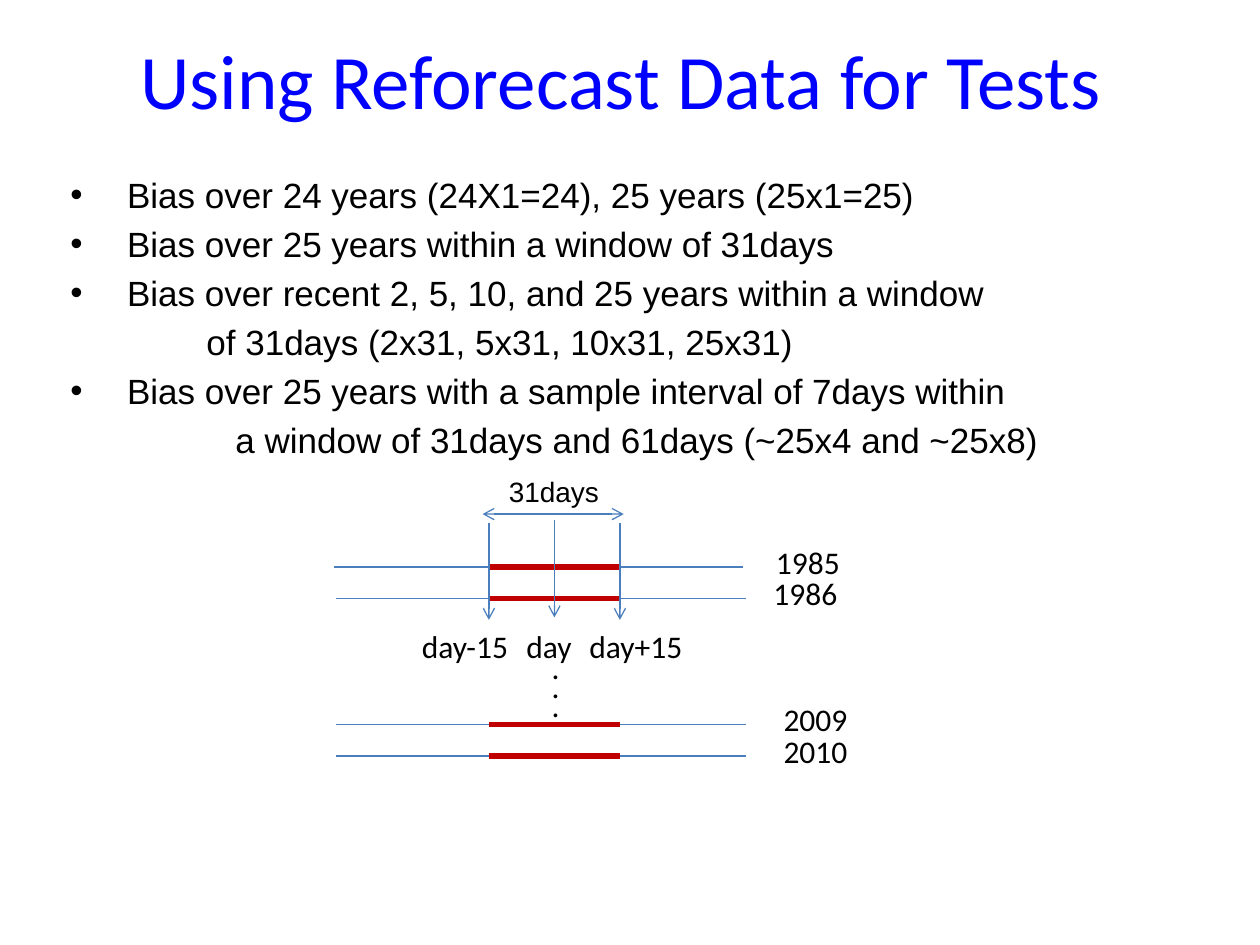
import pptx
import pptx.util
import pptx.dml.color
import pptx.enum.shapes
import pptx.enum.text
import pptx.oxml.ns
import lxml.etree

Inches = pptx.util.Inches
Pt = pptx.util.Pt
qn = pptx.oxml.ns.qn

COLORS = {"title": "0000FF", "text": "000000", "axis": "4B7EBC", "window": "C00000"}


def format_paragraph(paragraph, size, font, color):
    for run in paragraph.runs:
        run.font.size = Pt(size)
        run.font.name = font
        run.font.color.rgb = pptx.dml.color.RGBColor.from_string(COLORS[color])


def add_label(slide, left, top, width, height, text, wrap=False, line_spacing=None):
    label = slide.shapes.add_textbox(Inches(left), Inches(top), Inches(width), Inches(height))
    frame = label.text_frame
    frame.word_wrap = wrap
    frame.auto_size = pptx.enum.text.MSO_AUTO_SIZE.SHAPE_TO_FIT_TEXT
    frame.text = text
    for paragraph in frame.paragraphs:
        paragraph.line_spacing = line_spacing
        format_paragraph(paragraph, 18, "Calibri", "text")


def add_line(slide, start, end, color="axis", weight=0.75, arrows=()):
    line = slide.shapes.add_connector(
        pptx.enum.shapes.MSO_CONNECTOR.STRAIGHT,
        Inches(start[0]), Inches(start[1]), Inches(end[0]), Inches(end[1]))
    line.line.color.rgb = pptx.dml.color.RGBColor.from_string(COLORS[color])
    line.line.width = Pt(weight)
    outline = line.line._get_or_add_ln()
    for arrow in arrows:
        lxml.etree.SubElement(outline, qn(f"a:{arrow}"), type="arrow")
    lxml.etree.SubElement(line._element.spPr, qn("a:effectLst"))


def add_title(slide, left, top, width, height):
    title = slide.shapes.add_textbox(Inches(left), Inches(top), Inches(width), Inches(height))
    frame = title.text_frame
    frame.word_wrap = True
    frame.vertical_anchor = pptx.enum.text.MSO_ANCHOR.MIDDLE
    frame.text = "Using Reforecast Data for Tests"
    frame.paragraphs[0].alignment = pptx.enum.text.PP_ALIGN.CENTER
    format_paragraph(frame.paragraphs[0], 44, "Calibri", "title")


def add_bias_list(slide, left, top, width, height):
    bullet_indent = 0.45
    entries = [
        ("Bias over 24 years (24X1=24), 25 years (25x1=25)", bullet_indent, 20, 4),
        ("Bias over 25 years within a window of 31days", bullet_indent, 20, 4),
        ("Bias over recent 2, 5, 10, and 25 years within a window", bullet_indent, 20, 4),
        ("of 31days (2x31, 5x31, 10x31, 25x31)", 1.08, 20, 4),
        ("Bias over 25 years with a sample interval of 7days within", bullet_indent, 20, 4),
        ("a window of 31days and 61days (~25x4 and ~25x8)", 1.31, 20, 4),
        ("31days", 3.48, 16, 8),
    ]
    bias_list = slide.shapes.add_textbox(
        Inches(left), Inches(top), Inches(width), Inches(height))
    frame = bias_list.text_frame
    frame.word_wrap = True
    frame.text = "\n".join(entry[0] for entry in entries)
    for paragraph, (_, indent, size, gap) in zip(frame.paragraphs, entries):
        paragraph.space_before = Pt(gap)
        format_paragraph(paragraph, size, "Arial", "text")
        properties = paragraph._p.get_or_add_pPr()
        properties.set("marL", str(Inches(indent)))
        if indent == bullet_indent:
            properties.set("indent", str(-Inches(indent)))
            lxml.etree.SubElement(properties, qn("a:buFont"), typeface="Arial")
            lxml.etree.SubElement(properties, qn("a:buChar"), char="•")


def add_window_diagram(slide, left, top):
    window_start, window_end = left + 1.23, left + 2.27
    window_middle = (window_start + window_end) / 2
    years = [
        ("1985", 0.42, 0, 3.41),
        ("1986", 0.67, 0.02, 3.39),
        ("2009", 1.67, 0.02, 3.47),
        ("2010", 1.92, 0.02, 3.47),
    ]
    for year, offset, shift, label_left in years:
        y = top + offset
        axis_left = left + shift
        add_line(slide, (axis_left, y), (axis_left + 3.25, y))
        add_line(slide, (window_start, y), (window_end, y), "window", 3.25)
        add_label(slide, left + label_left, y - 0.24, 0.71, 0.4, year)

    add_label(slide, left + 1.63, top + 1.16, 0.27, 0.56, ".\n.\n.", line_spacing=Pt(11))

    days = [
        ("day-15", window_start, 0.07, 0.6, 1),
        ("day", window_middle, 0.05, 1.43, 0.58),
        ("day+15", window_end, 0.07, 1.93, 1),
    ]
    for day, x, offset, label_left, width in days:
        add_line(slide, (x, top + offset), (x, top + offset + 0.77), arrows=["tailEnd"])
        add_label(slide, left + label_left, top + 0.85, width, 0.4, day, wrap=True)

    add_line(slide, (window_start - 0.05, top), (window_end + 0.03, top),
             arrows=["headEnd", "tailEnd"])


def main():
    deck = pptx.Presentation()
    deck.slide_width, deck.slide_height = Inches(10), Inches(7.5)
    slide = deck.slides.add_slide(deck.slide_layouts[6])
    add_title(slide, 0.43, 0, 9, 1.25)
    add_bias_list(slide, 0.46, 1.33, 8.92, 5.74)
    add_window_diagram(slide, 2.65, 4.08)
    deck.save("out.pptx")


if __name__ == "__main__":
    main()
